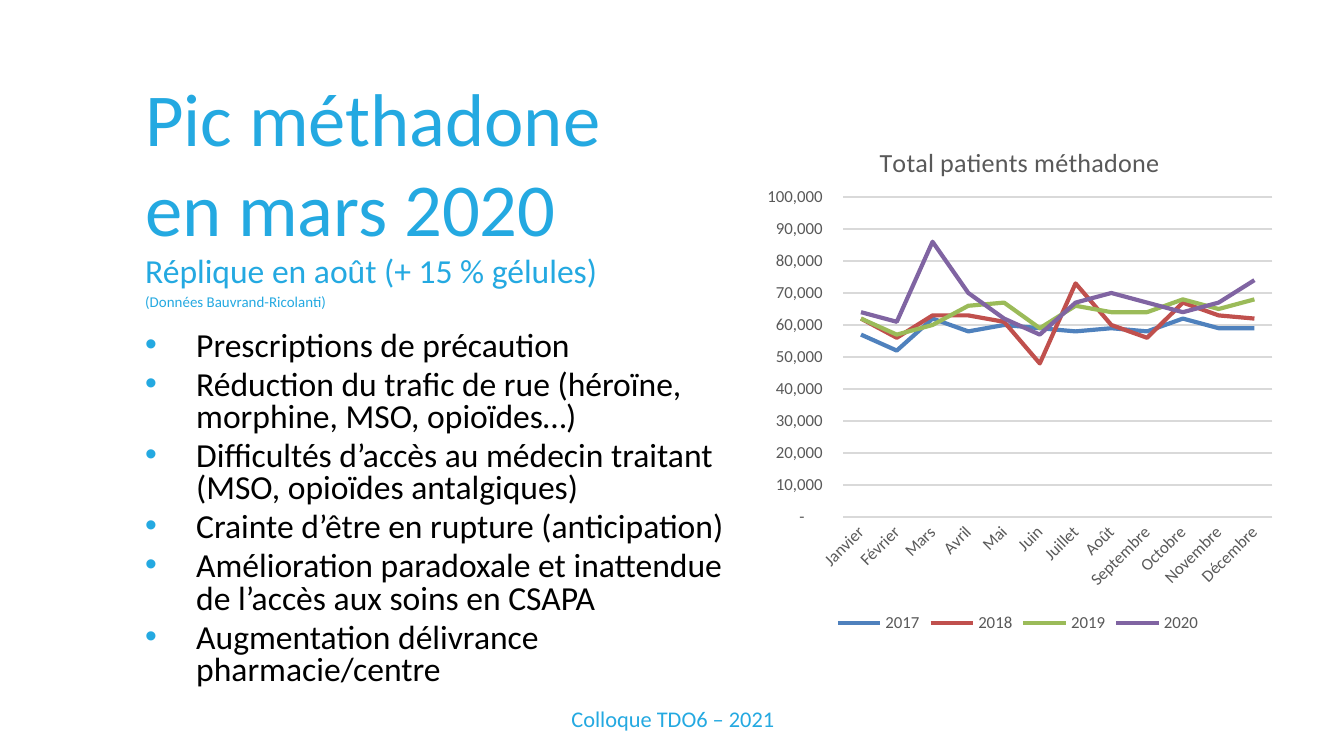
"""Build the slide on the methadone peak of March 2020."""
from dataclasses import dataclass

from lxml import etree
from pptx import Presentation
from pptx.chart.data import CategoryChartData
from pptx.dml.color import RGBColor
from pptx.enum.chart import XL_CHART_TYPE, XL_LEGEND_POSITION, XL_TICK_MARK
from pptx.enum.text import MSO_ANCHOR, PP_ALIGN
from pptx.oxml import parse_xml
from pptx.oxml.ns import nsdecls, qn
from pptx.util import Emu, Pt

LINE = XL_CHART_TYPE.LINE
LEGEND_BOTTOM = XL_LEGEND_POSITION.BOTTOM
NO_TICK = XL_TICK_MARK.NONE
TOP, MIDDLE, BOTTOM = MSO_ANCHOR.TOP, MSO_ANCHOR.MIDDLE, MSO_ANCHOR.BOTTOM
LEFT, CENTER = PP_ALIGN.LEFT, PP_ALIGN.CENTER
SCALE = 914400 / 134.4
NUMBER_FORMAT = r'_-* #,##0\ _€_-;\-* #,##0\ _€_-;_-* "-"??\ _€_-;_-@_-'

MONTHS = ["Janvier", "Février", "Mars", "Avril", "Mai", "Juin", "Juillet",
          "Août", "Septembre", "Octobre", "Novembre", "Décembre"]
PATIENTS_IN_THOUSANDS = {
    "2017": [57, 52, 62, 58, 60, 59, 58, 59, 58, 62, 59, 59],
    "2018": [62, 56, 63, 63, 61, 48, 73, 60, 56, 67, 63, 62],
    "2019": [62, 57, 60, 66, 67, 59, 66, 64, 64, 68, 65, 68],
    "2020": [64, 61, 86, 70, 62, 57, 67, 70, 67, 64, 67, 74],
}
REASONS = [
    "Prescriptions de précaution",
    "Réduction du trafic de rue (héroïne, morphine, MSO, opioïdes…)",
    "Difficultés d’accès au médecin traitant (MSO, opioïdes antalgiques)",
    "Crainte d’être en rupture (anticipation)",
    "Amélioration paradoxale et inattendue de l’accès aux soins en CSAPA",
    "Augmentation délivrance pharmacie/centre",
]


@dataclass(frozen=True)
class Theme:
    font: str = "Calibri"
    accent: str = "24A9E1"
    body: str = "000000"
    chart_text: str = "595959"
    grid: str = "D9D9D9"
    series: tuple = ("4F81BD", "C0504D", "9BBB59", "8064A2")
    title_size: int = 40
    body_size: int = 18
    chart_title_size: int = 14
    footer_size: int = 12
    label_size: int = 9
    source_size: int = 8


def px(length):
    return Emu(round(length * SCALE))


class SlideBuilder:
    def __init__(self, slide, theme):
        self.slide = slide
        self.theme = theme

    def style_font(self, font, size, color):
        font.name = self.theme.font
        font.size = Pt(size)
        font.bold = False
        font.color.rgb = RGBColor.from_string(color)

    def text(self, box, lines, color, anchor=TOP, align=LEFT, bottom_inset=7):
        shape = self.slide.shapes.add_textbox(*map(px, box))
        frame = shape.text_frame
        frame.word_wrap = True
        frame.vertical_anchor = anchor
        frame.margin_bottom = px(bottom_inset)
        frame.text = "\n".join(line for line, size in lines)
        for paragraph, (line, size) in zip(frame.paragraphs, lines):
            paragraph.alignment = align
            for run in paragraph.runs:
                self.style_font(run.font, size, color)
        return frame.paragraphs

    def bullets(self, box, items):
        size = self.theme.body_size
        paragraphs = self.text(box, [(item, size) for item in items], self.theme.body)
        for paragraph in paragraphs:
            paragraph.line_spacing = 0.8
            paragraph.space_before = Pt(size * 0.2)
            properties = paragraph._p.get_or_add_pPr()
            properties.set("marL", str(px(51)))
            properties.set("indent", str(px(-51)))
            color = etree.SubElement(properties, qn("a:buClr"))
            etree.SubElement(color, qn("a:srgbClr"), val=self.theme.accent)
            etree.SubElement(properties, qn("a:buFont"), typeface="Arial")
            etree.SubElement(properties, qn("a:buChar"), char="•")

    def place(self, parent, **fractions):
        layout = parent.find(qn("c:layout"))
        if layout is not None:
            parent.remove(layout)
        target = '<c:layoutTarget val="inner"/>' if "w" in fractions else ""
        modes = "".join(f'<c:{key}Mode val="edge"/>' for key in "xy")
        values = "".join(f'<c:{key} val="{value}"/>' for key, value in fractions.items())
        layout = parse_xml(f'<c:layout {nsdecls("c")}><c:manualLayout>'
                           f'{target}{modes}{values}</c:manualLayout></c:layout>')
        text = parent.find(qn("c:tx"))
        parent.insert(0 if text is None else 1, layout)

    def style_axis(self, axis):
        axis.major_tick_mark = axis.minor_tick_mark = NO_TICK
        self.style_font(axis.tick_labels.font, self.theme.label_size, self.theme.chart_text)

    def line_chart(self, box, title, categories, series):
        theme = self.theme
        data = CategoryChartData(number_format=NUMBER_FORMAT)
        data.categories = categories
        for name, thousands in series.items():
            data.add_series(name, [value * 1000 for value in thousands])
        chart = self.slide.shapes.add_chart(LINE, *map(px, box), data).chart
        self.style_font(chart.font, theme.label_size, theme.chart_text)

        chart.has_title = True
        title_frame = chart.chart_title.text_frame
        title_frame.text = title
        self.style_font(title_frame.paragraphs[0].runs[0].font,
                        theme.chart_title_size, theme.chart_text)
        self.place(chart.chart_title._element, x=0.23, y=0.05)
        self.place(chart._chartSpace.chart.plotArea, x=0.17, y=0.16, w=0.81, h=0.61)

        chart.has_legend = True
        chart.legend.position = LEGEND_BOTTOM
        chart.legend.include_in_layout = False
        self.style_font(chart.legend.font, theme.label_size, theme.chart_text)

        months, patients = chart.category_axis, chart.value_axis
        self.style_axis(months)
        self.style_axis(patients)
        months._element.txPr.bodyPr.set("rot", "-2700000")
        patients.minimum_scale, patients.maximum_scale = 0, 100000
        patients.major_unit = 10000
        patients.tick_labels.number_format = NUMBER_FORMAT
        patients.tick_labels.number_format_is_linked = False
        patients.format.line.fill.background()
        for line in (months.format.line, patients.major_gridlines.format.line):
            line.color.rgb = RGBColor.from_string(theme.grid)
            line.width = Pt(0.75)

        chart.plots[0].vary_by_categories = False
        for year, color in zip(chart.plots[0].series, theme.series):
            year.smooth = False
            year.format.line.color.rgb = RGBColor.from_string(color)
            year.format.line.width = Pt(2.25)


def main():
    presentation = Presentation()
    presentation.slide_width, presentation.slide_height = px(1344), px(756)
    slide = presentation.slides.add_slide(presentation.slide_layouts[6])
    theme = Theme()
    builder = SlideBuilder(slide, theme)

    builder.text((132, 125, 614, 126),
                 [("Pic méthadone \ven mars 2020", theme.title_size)],
                 theme.accent, anchor=BOTTOM, bottom_inset=0)
    footer = builder.text((460, 700, 426, 40),
                          [("Colloque TDO6 – 2021", theme.footer_size)],
                          theme.accent, anchor=MIDDLE, align=CENTER)
    footer[0].line_spacing = 0.9
    footer[0].space_after = Pt(6)
    subtitle = builder.text((132, 243, 614, 70),
                            [("Réplique en août (+ 15 % gélules)", theme.body_size),
                             ("(Données Bauvrand-Ricolanti)", theme.source_size)],
                            theme.accent)
    subtitle[1].space_before = Pt(theme.source_size * 0.2)
    builder.bullets((132, 325, 614, 399), REASONS)
    builder.line_chart((753, 113, 530, 525), "Total patients méthadone",
                       MONTHS, PATIENTS_IN_THOUSANDS)
    presentation.save("out.pptx")


if __name__ == "__main__":
    main()
